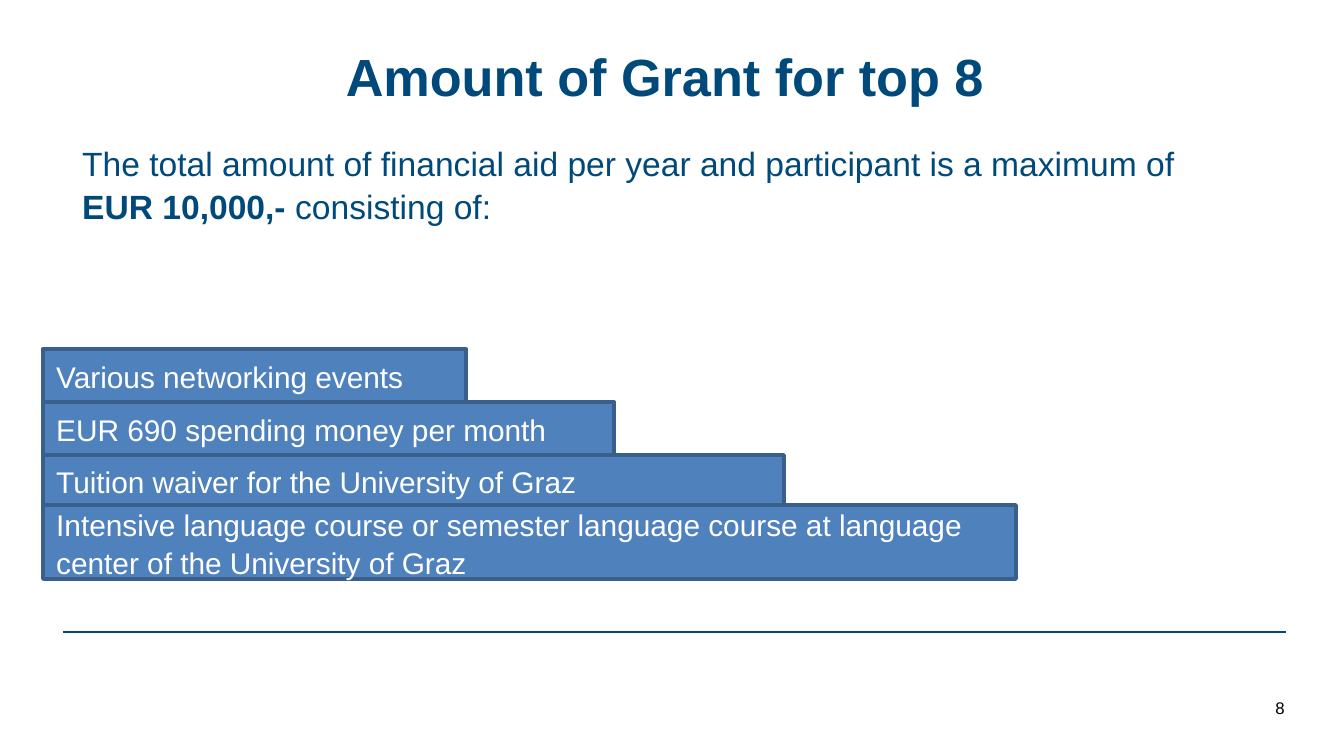
from dataclasses import dataclass

from pptx import Presentation
from pptx.dml.color import RGBColor
from pptx.enum.shapes import MSO_CONNECTOR, MSO_SHAPE
from pptx.enum.text import MSO_ANCHOR, PP_ALIGN
from pptx.oxml.ns import qn
from pptx.util import Emu, Pt
from lxml.etree import SubElement

TITLE = [("Amount of Grant for top 8 ", True)]
INTRO = [
    ("The total amount of financial aid per year and participant is a maximum of ", False),
    ("EUR 10,000,- ", True),
    ("consisting of:", False),
]
PAGE_NUMBER = [("8", False)]
BENEFITS = [
    ("Various networking events", 423, 53),
    ("EUR 690 spending money per month", 571, 53),
    ("Tuition waiver for the University of Graz", 741, 50),
    ("Intensive language course or semester language course at language center of the University of Graz", 973, 74),
]
BENEFITS_LEFT, BENEFITS_TOP = 43, 349


@dataclass(frozen=True)
class Theme:
    font: str = "Arial"
    navy: RGBColor = RGBColor.from_string("00497B")
    bar: RGBColor = RGBColor.from_string("4F81BD")
    bar_edge: RGBColor = RGBColor.from_string("3A5F8C")
    white: RGBColor = RGBColor.from_string("FFFFFF")
    black: RGBColor = RGBColor.from_string("000000")
    title: int = 28
    intro: int = 18
    benefit: int = 16
    page_number: int = 9
    line_spacing: float = 1.06


THEME = Theme()


def px(length):
    return Emu(round(length * 914400 / 134.4))


def write(shape, runs, *, size, color, align=PP_ALIGN.LEFT, anchor=MSO_ANCHOR.TOP, inset_top=7):
    frame = shape.text_frame
    frame.word_wrap = True
    frame.vertical_anchor = anchor
    frame.margin_top = px(inset_top)
    paragraph = frame.paragraphs[0]
    paragraph.alignment = align
    paragraph.line_spacing = THEME.line_spacing
    for words, bold in runs:
        run = paragraph.add_run()
        run.text = words
        run.font.name = THEME.font
        run.font.size = Pt(size)
        run.font.bold = bold
        run.font.color.rgb = color


def add_text(slide, box, runs, **style):
    write(slide.shapes.add_textbox(*map(px, box)), runs, **style)


def add_benefit(slide, words, top, width, height):
    bar = slide.shapes.add_shape(
        MSO_SHAPE.RECTANGLE, *map(px, (BENEFITS_LEFT, top, width, height))
    )
    bar.shadow.inherit = False
    bar.fill.solid()
    bar.fill.fore_color.rgb = THEME.bar
    bar.line.color.rgb = THEME.bar_edge
    bar.line.width = Pt(2)
    write(bar, [(words, False)], size=THEME.benefit, color=THEME.white, anchor=MSO_ANCHOR.MIDDLE)


def add_footer_rule(slide):
    rule = slide.shapes.add_connector(MSO_CONNECTOR.STRAIGHT, *map(px, (63, 632, 1286, 632)))
    rule.line.color.rgb = THEME.navy
    rule.line.width = Pt(1)
    SubElement(rule._element.spPr, qn("a:effectLst"))


def main():
    deck = Presentation()
    deck.slide_width, deck.slide_height = px(1344), px(756)
    slide = deck.slides.add_slide(deck.slide_layouts[6])

    add_footer_rule(slide)
    add_text(slide, (67, 31, 1210, 126), TITLE, size=THEME.title, color=THEME.navy,
             align=PP_ALIGN.CENTER, inset_top=9)
    add_text(slide, (69, 134, 1198, 126), INTRO, size=THEME.intro, color=THEME.navy)
    add_text(slide, (1212, 687, 86, 40), PAGE_NUMBER, size=THEME.page_number, color=THEME.black,
             align=PP_ALIGN.RIGHT, anchor=MSO_ANCHOR.MIDDLE)

    top = BENEFITS_TOP
    for words, width, height in BENEFITS:
        add_benefit(slide, words, top, width, height)
        top += height

    deck.save("out.pptx")


if __name__ == "__main__":
    main()
